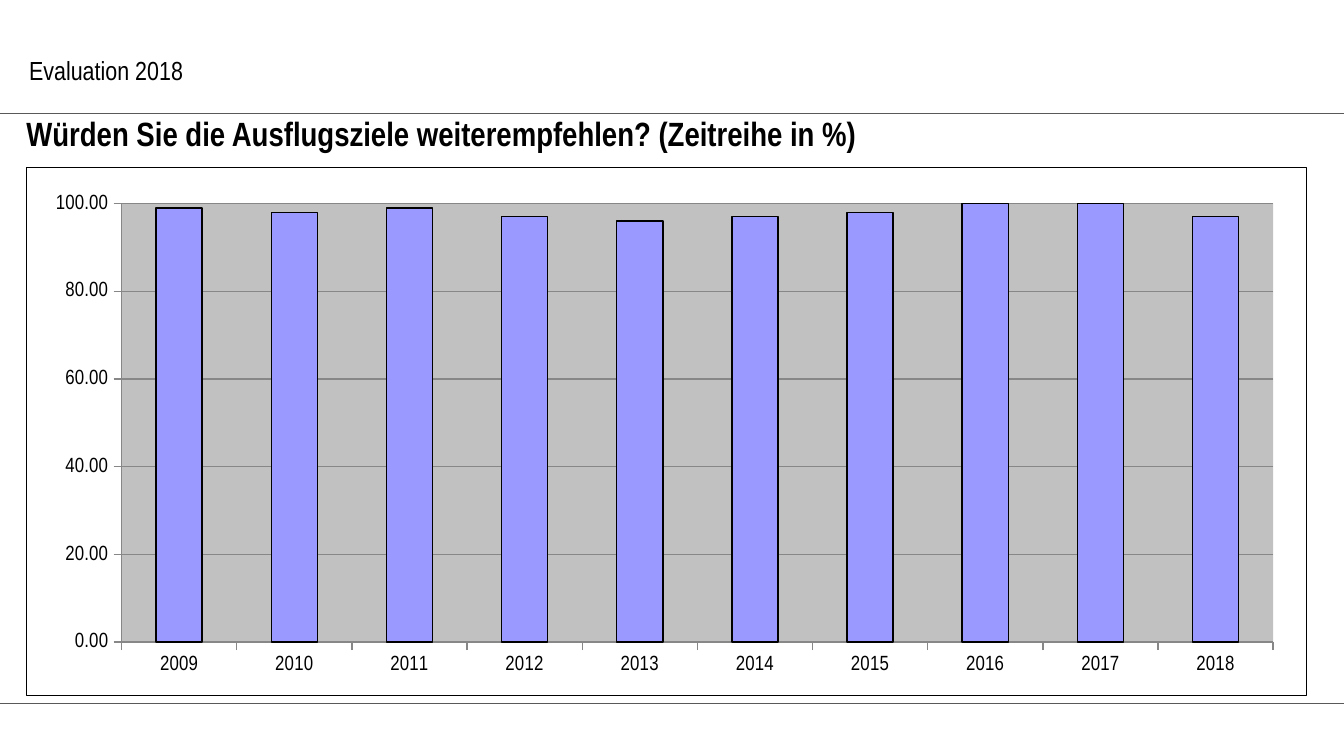
import pptx
import pptx.chart.data
import pptx.dml.color
import pptx.enum.chart
import pptx.enum.shapes
import pptx.enum.text
import pptx.oxml
import pptx.oxml.ns
import pptx.util
from pptx.util import Cm

COLORS = {
    "text": "000000",
    "rule": "595959",
    "grid": "878787",
    "plot": "C1C1C1",
    "bar": "9999FF",
    "frame": "000000",
}
FONT = "Arial Narrow"
FIRST_YEAR = 2009
RECOMMENDED = (99, 98, 99, 97, 96, 97, 98, 100, 100, 97)
PLOT_LAYOUT = {"x": 0.074, "y": 0.069, "w": 0.9, "h": 0.83}


def rgb(part):
    """Return the colour of a named part."""
    return pptx.dml.color.RGBColor.from_string(COLORS[part])


def apply(target, formats):
    """Set each attribute in formats on target."""
    for name, value in formats.items():
        setattr(target, name, value)


def style_font(font, size, bold=False):
    """Give a font the slide's typeface and colour."""
    apply(font, {"name": FONT, "size": pptx.util.Pt(size), "bold": bold})
    font.color.rgb = rgb("text")


def style_line(line, part, width):
    """Give a line its colour and its width in points."""
    line.color.rgb = rgb(part)
    line.width = pptx.util.Pt(width)


def chart_xml(markup):
    """Parse a chart element written with the c and a prefixes."""
    tag, rest = markup.split(">", 1)
    return pptx.oxml.parse_xml(f"{tag} {pptx.oxml.ns.nsdecls('c', 'a')}>{rest}")


def add_rule(slide, left, top):
    """Draw a thin rule to the right edge of the slide."""
    rule = slide.shapes.add_connector(
        pptx.enum.shapes.MSO_CONNECTOR.STRAIGHT, left, top, Cm(25.4), top)
    style_line(rule.line, "rule", 0.5)
    rule._element.spPr.append(pptx.oxml.parse_xml(
        f"<a:effectLst {pptx.oxml.ns.nsdecls('a')}/>"))


def write_text(box, text, size, bold=False, margins=None):
    """Fill a box with one left-aligned line of text."""
    frame = box.text_frame
    apply(frame, {
        "text": text,
        "word_wrap": True,
        "auto_size": pptx.enum.text.MSO_AUTO_SIZE.NONE,
        "vertical_anchor": pptx.enum.text.MSO_ANCHOR.TOP,
        **(margins or {}),
    })
    paragraph = frame.paragraphs[0]
    paragraph.alignment = pptx.enum.text.PP_ALIGN.LEFT
    style_font(paragraph.runs[0].font, size, bold)


def style_axes(chart):
    """Format the year axis and the percentage axis."""
    years, percent = chart.category_axis, chart.value_axis
    apply(percent, {"minimum_scale": 0, "maximum_scale": 100, "major_unit": 20,
                    "has_major_gridlines": True})
    apply(percent.tick_labels, {"number_format": "#,##0.00",
                                "number_format_is_linked": False})
    years.has_major_gridlines = False
    for axis in (years, percent):
        axis.major_tick_mark = pptx.enum.chart.XL_TICK_MARK.OUTSIDE
        style_line(axis.format.line, "grid", 0.75)
    style_line(percent.major_gridlines.format.line, "grid", 0.75)


def style_areas(chart):
    """Place and fill the plot area and frame the whole chart."""
    plot_area = chart._chartSpace.chart.plotArea
    for layout in plot_area.findall(pptx.oxml.ns.qn("c:layout")):
        plot_area.remove(layout)
    modes = "".join(f'<c:{side}Mode val="edge"/>' for side in "xy")
    sizes = "".join(f'<c:{side} val="{share}"/>' for side, share in PLOT_LAYOUT.items())
    plot_area.insert(0, chart_xml(
        '<c:layout><c:manualLayout><c:layoutTarget val="inner"/>'
        f"{modes}{sizes}</c:manualLayout></c:layout>"))
    plot_area.append(chart_xml(
        f'<c:spPr><a:solidFill><a:srgbClr val="{COLORS["plot"]}"/></a:solidFill>'
        "<a:ln><a:noFill/></a:ln></c:spPr>"))
    chart._chartSpace.chart.addnext(chart_xml(
        '<c:spPr><a:noFill/><a:ln w="6350"><a:solidFill>'
        f'<a:srgbClr val="{COLORS["frame"]}"/></a:solidFill></a:ln></c:spPr>'))


def add_recommendation_chart(slide):
    """Add the columns of yearly recommendation rates."""
    rates = pptx.chart.data.CategoryChartData()
    rates.categories = [str(FIRST_YEAR + i) for i in range(len(RECOMMENDED))]
    rates.add_series("Series 1", RECOMMENDED)
    chart = slide.shapes.add_chart(
        pptx.enum.chart.XL_CHART_TYPE.COLUMN_CLUSTERED,
        Cm(0.5), Cm(3.15), Cm(24.2), Cm(10), rates).chart
    apply(chart, {"has_legend": False, "has_title": False})
    style_font(chart.font, 11)
    columns = chart.plots[0]
    apply(columns, {"gap_width": 150, "vary_by_categories": False})
    bars = columns.series[0].format
    bars.fill.solid()
    bars.fill.fore_color.rgb = rgb("bar")
    style_line(bars.line, "frame", 0.75)
    style_axes(chart)
    style_areas(chart)


def main():
    """Build and save the slide."""
    deck = pptx.Presentation()
    apply(deck, {"slide_width": Cm(25.4), "slide_height": Cm(14.28)})
    slide = deck.slides.add_slide(deck.slide_layouts[5])

    add_rule(slide, Cm(-0.1), Cm(13.28))
    add_rule(slide, Cm(0), Cm(2.14))
    add_recommendation_chart(slide)

    question = slide.shapes.title
    apply(question, {"left": Cm(0.5), "top": Cm(2.14),
                     "width": Cm(24), "height": Cm(0.8)})
    no_margins = {f"margin_{side}": 0 for side in ("left", "top", "right", "bottom")}
    write_text(question, "Würden Sie die Ausflugsziele weiterempfehlen? (Zeitreihe in %)",
               18, True, no_margins)

    header = slide.shapes.add_textbox(Cm(0.3), Cm(0.9), Cm(24.6), Cm(1.62))
    write_text(header, "Evaluation 2018", 14)
    deck.save("out.pptx")


if __name__ == "__main__":
    main()
